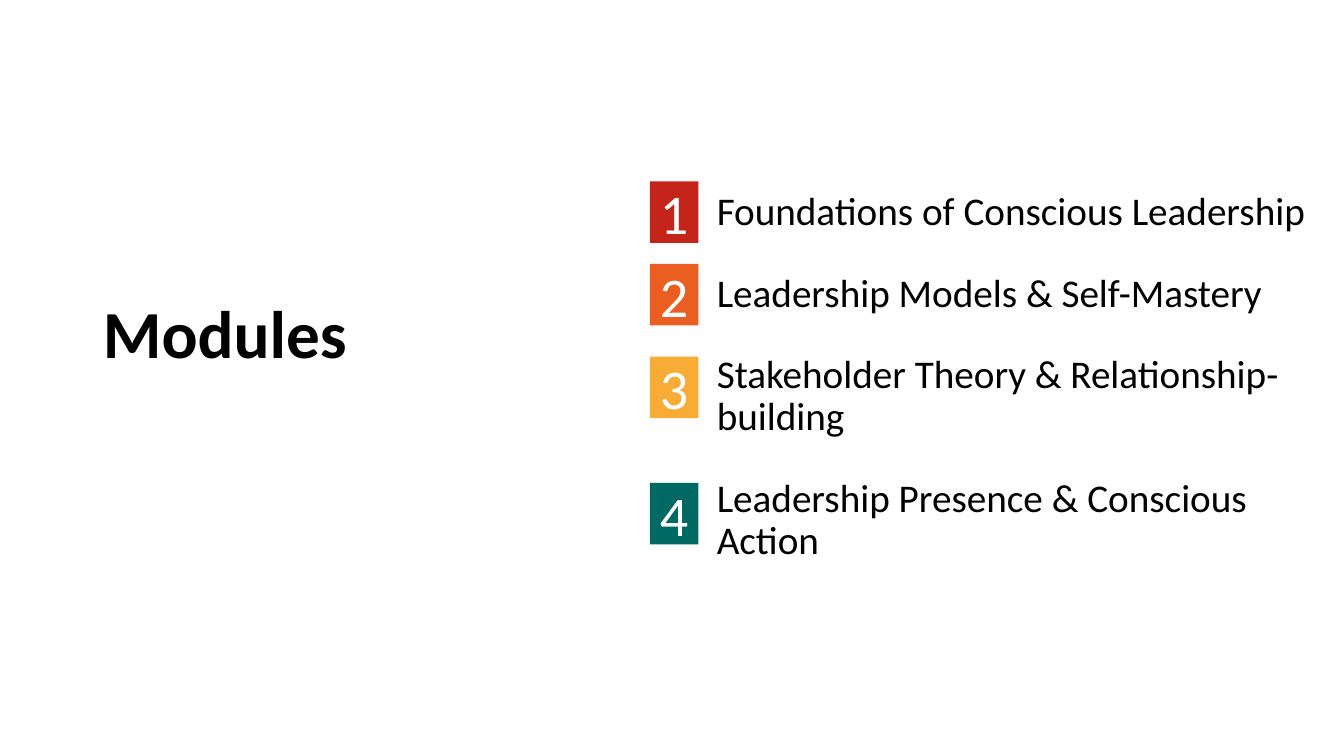
from lxml.etree import SubElement
from pptx import Presentation
from pptx.dml.color import RGBColor
from pptx.enum.shapes import MSO_SHAPE
from pptx.enum.text import MSO_ANCHOR, MSO_AUTO_SIZE, PP_ALIGN
from pptx.oxml.ns import qn
from pptx.util import Cm, Pt

MODULES = [
    ("Foundations of Conscious Leadership", "C5241B", 4.57),
    ("Leadership Models & Self-Mastery", "EA5E22", 6.65),
    ("Stakeholder Theory & Relationship-building", "F8AC36", 8.99),
    ("Leadership Presence & Conscious Action", "006964", 12.17),
]


def colour(value):
    return RGBColor.from_string(value)


def apply(target, formats):
    for name, value in formats.items():
        setattr(target, name, value)


class ModuleSlide:
    font_name = "Calibri"
    text_colour = "000000"
    badge_text_colour = "FFFFFF"

    def __init__(self, deck):
        self.slide = deck.slides.add_slide(deck.slide_layouts[1])

    def place(self, element, left, top, width, height):
        apply(element, {"left": Cm(left), "top": Cm(top),
                        "width": Cm(width), "height": Cm(height)})

    def add_text(self, paragraph, text, size, text_colour, bold=False):
        run = paragraph.add_run()
        run.text = text
        apply(run.font, {"name": self.font_name, "size": Pt(size), "bold": bold})
        run.font.color.rgb = colour(text_colour)

    def heading(self, text, *box):
        title = self.slide.shapes.title
        self.place(title, *box)
        apply(title.text_frame, {"vertical_anchor": MSO_ANCHOR.BOTTOM, "word_wrap": True,
                                 "auto_size": MSO_AUTO_SIZE.NONE})
        paragraph = title.text_frame.paragraphs[0]
        apply(paragraph, {"alignment": PP_ALIGN.LEFT, "line_spacing": 0.9})
        self.add_text(paragraph, text, 48, self.text_colour, bold=True)

    def module_list(self, names, *box):
        body = self.slide.placeholders[1]
        self.place(body, *box)
        frame = body.text_frame
        apply(frame, {"vertical_anchor": MSO_ANCHOR.MIDDLE, "word_wrap": True,
                      "auto_size": MSO_AUTO_SIZE.NONE})
        for index, name in enumerate(names):
            paragraph = frame.add_paragraph() if index else frame.paragraphs[0]
            properties = paragraph._p.get_or_add_pPr()
            apply(paragraph, {"line_spacing": 0.9, "space_after": Pt(18),
                              "space_before": Pt(10 if index else 0)})
            properties.set("marL", "0")
            properties.set("indent", "0")
            SubElement(properties, qn("a:buNone"))
            self.add_text(paragraph, name, 28, self.text_colour)

    def badge(self, number, fill, *box):
        square = self.slide.shapes.add_shape(MSO_SHAPE.RECTANGLE, *map(Cm, box))
        square.shadow.inherit = False
        square.fill.solid()
        square.fill.fore_color.rgb = colour(fill)
        square.line.fill.background()
        apply(square.text_frame, {"margin_left": 0, "margin_right": 0, "word_wrap": True,
                                  "vertical_anchor": MSO_ANCHOR.MIDDLE})
        paragraph = square.text_frame.paragraphs[0]
        paragraph.alignment = PP_ALIGN.CENTER
        self.add_text(paragraph, str(number), 40, self.badge_text_colour)


def main():
    deck = Presentation()
    apply(deck, {"slide_width": Cm(33.87), "slide_height": Cm(19.05)})
    page = ModuleSlide(deck)
    page.heading("Modules", 2.34, 6.22, 10.92, 3.3)
    page.module_list([name for name, _, _ in MODULES], 17.81, 2.74, 15.54, 13.54)
    for number, (_, fill, top) in enumerate(MODULES, 1):
        page.badge(number, fill, 16.38, top, 1.22, 1.55)
    deck.save("out.pptx")


if __name__ == "__main__":
    main()
